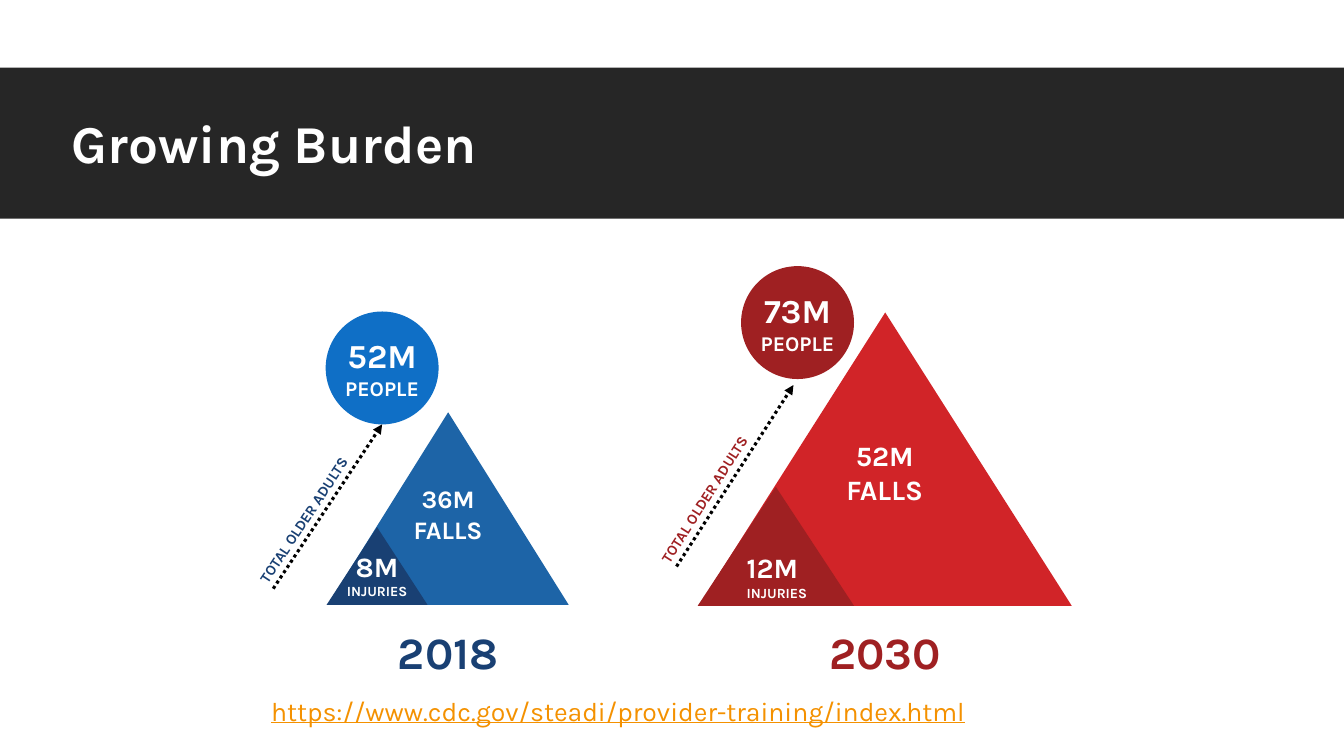
from lxml.etree import SubElement
from pptx import Presentation
from pptx.dml.color import RGBColor
from pptx.enum.dml import MSO_LINE
from pptx.enum.shapes import MSO_CONNECTOR, MSO_SHAPE
from pptx.enum.text import MSO_ANCHOR, PP_ALIGN
from pptx.oxml.ns import qn
from pptx.util import Emu, Pt

PX = 9144  # 100 px to the inch
FONT = "Karla"
COLORS = {
    "band": "262626", "white": "FFFFFF", "black": "000000", "link": "F49100",
    "navy": "194073", "blue": "1D64A7", "sky": "0F6FC6",
    "red": "D12428", "maroon": "9F2022",
}


def px(*lengths):
    return [Emu(length * PX) for length in lengths]


def color(name):
    return RGBColor.from_string(COLORS[name])


def write_lines(shape, lines, *, ink="white", align=PP_ALIGN.CENTER,
                anchor=MSO_ANCHOR.TOP, wrap=True, bold=True, underline=False):
    """Write (text, point size) pairs, one paragraph each."""
    frame = shape.text_frame
    frame.word_wrap = wrap
    frame.vertical_anchor = anchor
    for index, (text, size) in enumerate(lines):
        paragraph = frame.add_paragraph() if index else frame.paragraphs[0]
        paragraph.alignment = align
        run = paragraph.add_run()
        run.text = text
        run.font.name = FONT
        run.font.size = Pt(size)
        run.font.bold = bold
        run.font.underline = underline
        run.font.color.rgb = color(ink)


def add_label(slide, box, lines, rotation=0, **text_format):
    label = slide.shapes.add_textbox(*px(*box))
    label.rotation = rotation
    write_lines(label, lines, **text_format)


def add_solid(slide, kind, box, fill, lines=(), **text_format):
    shape = slide.shapes.add_shape(kind, *px(*box))
    shape.shadow.inherit = False
    shape.fill.solid()
    shape.fill.fore_color.rgb = color(fill)
    shape.line.fill.background()
    if lines:
        write_lines(shape, lines, wrap=False, **text_format)


def add_dotted_arrow(slide, start, end):
    arrow = slide.shapes.add_connector(MSO_CONNECTOR.STRAIGHT, *px(*start, *end))
    arrow.line.color.rgb = color("black")
    arrow.line.width = Pt(2.25)
    arrow.line.dash_style = MSO_LINE.ROUND_DOT
    SubElement(arrow.line._get_or_add_ln(), qn("a:tailEnd"), type="triangle")
    SubElement(arrow._element.spPr, qn("a:effectLst"))


def add_burden(slide, *, year, dark, bright, circle_fill, people, falls, injuries,
               falls_size, injuries_align, falls_triangle, injuries_triangle,
               circle, falls_label, arrow, arrow_label, angle):
    # Falls, with the injuries among them
    add_solid(slide, MSO_SHAPE.ISOSCELES_TRIANGLE, falls_triangle, bright)
    add_solid(slide, MSO_SHAPE.ISOSCELES_TRIANGLE, injuries_triangle, dark,
              [(injuries, 20), ("INJURIES", 10)],
              align=injuries_align, anchor=MSO_ANCHOR.BOTTOM)
    add_label(slide, falls_label, [(falls, falls_size), ("FALLS", falls_size)])
    # All older adults
    add_solid(slide, MSO_SHAPE.OVAL, (*circle, 112, 112), circle_fill,
              [(people, 24), ("PEOPLE", 15)], anchor=MSO_ANCHOR.MIDDLE)
    add_dotted_arrow(slide, *arrow)
    add_label(slide, (*arrow_label, 230, 28), [("TOTAL OLDER ADULTS", 10.5)],
              rotation=angle, ink=dark, align=PP_ALIGN.LEFT)
    # Year under the triangle
    left, _, width, _ = falls_triangle
    add_label(slide, (left, 615, width, 64), [(year, 32)], ink=dark)


def main():
    presentation = Presentation()
    presentation.slide_width, presentation.slide_height = px(1333, 750)
    slide = presentation.slides.add_slide(presentation.slide_layouts[6])

    # Title band
    add_solid(slide, MSO_SHAPE.RECTANGLE, (0, 67, 1333, 150), "band")
    add_label(slide, (61, 71, 1031, 141), [("Growing Burden", 38)],
              align=PP_ALIGN.LEFT, anchor=MSO_ANCHOR.MIDDLE)

    # The two years
    add_burden(slide, year="2018", dark="navy", bright="blue", circle_fill="sky",
               people="52M", falls="36M", injuries="8M",
               falls_size=18, injuries_align=PP_ALIGN.CENTER,
               falls_triangle=(325, 409, 239, 191),
               injuries_triangle=(324, 523, 100, 77),
               circle=(323, 309), falls_label=(382, 475, 125, 71),
               arrow=((271, 584), (379, 421)), arrow_label=(204, 475), angle=303.4)
    add_burden(slide, year="2030", dark="maroon", bright="red", circle_fill="maroon",
               people="73M", falls="52M", injuries="12M",
               falls_size=20, injuries_align=PP_ALIGN.LEFT,
               falls_triangle=(693, 310, 370, 291),
               injuries_triangle=(692, 483, 155, 118),
               circle=(735, 264), falls_label=(815, 430, 125, 78),
               arrow=((671, 562), (787, 382)), arrow_label=(601, 454), angle=302.5)

    # Source address
    add_label(slide, (151, 684, 924, 42),
              [("https://www.cdc.gov/steadi/provider-training/index.html", 19)],
              ink="link", bold=False, underline=True)

    presentation.save("out.pptx")


if __name__ == "__main__":
    main()
